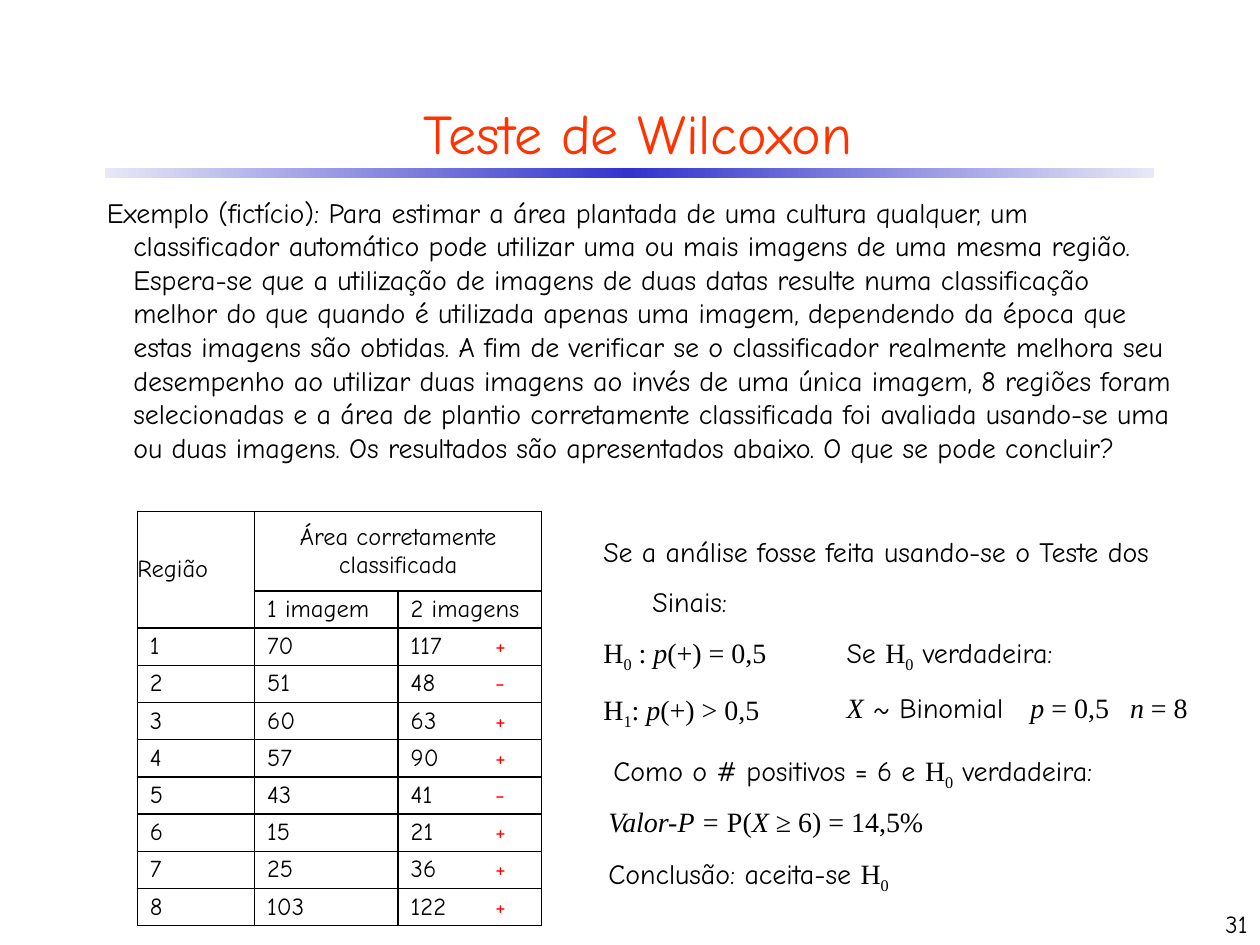
from lxml.etree import SubElement
from pptx import Presentation
from pptx.dml.color import RGBColor
from pptx.enum.shapes import MSO_SHAPE
from pptx.enum.text import MSO_ANCHOR, MSO_AUTO_SIZE, PP_ALIGN
from pptx.oxml import parse_xml
from pptx.oxml.ns import nsdecls, qn
from pptx.util import Emu, Inches, Pt

COMIC, TIMES = "Comic Neue", "Times New Roman"
BLACK, RED, ORANGE, WHITE = "000000", "FF0000", "FF3300", "FFFFFF"
PALE, BLUE = "E8E8F6", "3333CC"
NO_STYLE = "{2D5ABB26-0587-4C30-8999-92F81FD0307C}"

TITLE = "Teste de Wilcoxon"
EXAMPLE = (
    "Exemplo (fictício): Para estimar a área plantada de uma cultura qualquer, um "
    "classificador automático pode utilizar uma ou mais imagens de uma mesma região. "
    "Espera-se que a utilização de imagens de duas datas resulte numa classificação "
    "melhor do que quando é utilizada apenas uma imagem, dependendo da época que "
    "estas imagens são obtidas. A fim de verificar se o classificador realmente melhora "
    "seu desempenho ao utilizar duas imagens ao invés de uma única imagem, 8 regiões "
    "foram selecionadas e a área de plantio corretamente classificada foi avaliada "
    "usando-se uma ou duas imagens. Os resultados são apresentados abaixo. O que se "
    "pode concluir?"
)
INTRO = "Se a análise fosse feita usando-se o Teste dos Sinais:"
HEADS = ["Região", "Área corretamente classificada", "1 imagem", "2 imagens"]
AREAS = [(70, 117), (51, 48), (60, 63), (57, 90),
         (43, 41), (15, 21), (25, 36), (103, 122)]

# Run styles: c = plain, t = formula, i = formula variable, s = subscript
STYLES = {
    "c": {"face": COMIC},
    "t": {"face": TIMES},
    "i": {"face": TIMES, "italic": True},
    "s": {"face": TIMES, "base": -25},
}
H0 = [("H", "t"), ("0", "s")]
H1 = [("H", "t"), ("1", "s")]
NOTES = [  # left, top, width, height, paragraphs
    (4.69, 4.84, 1.95, 0.91, [
        H0 + [(" : ", "t"), ("p", "i"), ("(+) = 0,5", "t")],
        H1 + [(": ", "t"), ("p", "i"), ("(+) > 0,5", "t")]]),
    (6.62, 4.84, 2.99, 0.91, [
        [("Se ", "c")] + H0 + [(" verdadeira:", "c")],
        [("X", "i"), (" ~ Binomial\t", "c"), ("p", "i"), (" = 0,5\t", "t"),
         ("n", "i"), (" = 8", "t")]]),
    (4.77, 5.78, 4.37, 0.46, [
        [("Como o # positivos = 6 e ", "c")] + H0 + [(" verdadeira:", "c")]]),
    (4.73, 6.2, 2.73, 0.91, [
        [("Valor-P = ", "i"), ("P(", "t"), ("X", "i"), (" ≥ 6) = 14,5%", "t")],
        [("Conclusão: aceita-se ", "c")] + H0]),
]
TABS = [1.46, 2.25]

TABLE_LEFT, TABLE_TOP, TABLE_TALL = 1.09, 4.06, 3.29
COLS = [0.93, 1.14, 1.14]
HEAD_TALL = 0.63
ROW_TALL = (TABLE_TALL - HEAD_TALL) / (len(AREAS) + 1)
SIGN_LEFT, SIGN_WIDE = 3.83, 0.47


def color(code):
    return RGBColor.from_string(code)


def write(para, text, face=COMIC, size=16, ink=BLACK, italic=False, base=0):
    """Add one run; base is the baseline shift in percent."""
    run = para.add_run()
    run.text = text
    font = run.font
    font.name, font.size, font.italic = face, Pt(size), italic
    font.color.rgb = color(ink)
    if base:
        run._r.get_or_add_rPr().set("baseline", str(base * 1000))


def add_box(slide, left, top, wide, tall, paras, size=16, gap=None, hang=0,
            align=PP_ALIGN.LEFT, anchor=MSO_ANCHOR.TOP):
    """Add a text box; paras holds lists of (text, style) runs."""
    box = slide.shapes.add_textbox(*map(Inches, (left, top, wide, tall)))
    frame = box.text_frame
    frame.word_wrap, frame.vertical_anchor = True, anchor
    frame.auto_size = MSO_AUTO_SIZE.NONE
    for num, runs in enumerate(paras):
        para = frame.add_paragraph() if num else frame.paragraphs[0]
        para.alignment, para.line_spacing = align, gap
        props = para._p.get_or_add_pPr()
        if hang:
            props.set("marL", str(Inches(hang)))
            props.set("indent", str(-Inches(hang)))
        if any("\t" in text for text, _ in runs):
            stops = SubElement(props, qn("a:tabLst"))
            for pos in TABS:
                SubElement(stops, qn("a:tab"), pos=str(Inches(pos)), algn="l")
        for text, style in runs:
            write(para, text, size=size, **STYLES[style])


def add_grid(slide, left, top, cols, rows):
    wide, tall = Inches(sum(cols)), Inches(sum(rows))
    frame = slide.shapes.add_table(len(rows), len(cols), Inches(left),
                                   Inches(top), wide, tall)
    table = frame.table
    table.first_row = table.horz_banding = False
    table._tbl.tblPr.find(qn("a:tableStyleId")).text = NO_STYLE
    for col, size in zip(table.columns, cols):
        col.width = Inches(size)
    for row, size in zip(table.rows, rows):
        row.height = Inches(size)
    return table


def fill_cell(cell, text, ink=BLACK, pad=0.1, align=PP_ALIGN.LEFT):
    cell.margin_left = cell.margin_right = Inches(pad)
    cell.margin_top = cell.margin_bottom = Emu(0)
    cell.vertical_anchor = MSO_ANCHOR.MIDDLE
    para = cell.text_frame.paragraphs[0]
    para.alignment = align
    write(para, text, size=14, ink=ink)


def frame_cell(cell):
    """Give a cell black borders and a white fill."""
    props = cell._tc.get_or_add_tcPr()
    for side in ("lnL", "lnR", "lnT", "lnB"):
        props.append(parse_xml(
            f'<a:{side} {nsdecls("a")} w="{Pt(1)}"><a:solidFill>'
            f'<a:srgbClr val="{BLACK}"/></a:solidFill></a:{side}>'))
    cell.fill.solid()
    cell.fill.fore_color.rgb = color(WHITE)


def add_bar(slide):
    bar = slide.shapes.add_shape(MSO_SHAPE.RECTANGLE, *map(
        Inches, (0.83, 1.33, 8.33, 0.08)))
    bar.shadow.inherit = False
    bar.line.fill.background()
    bar.fill.gradient()
    bar.fill.gradient_angle = 0
    stops = bar._element.spPr.find(qn("a:gradFill")).find(qn("a:gsLst"))
    for stop in list(stops):
        stops.remove(stop)
    for pos, code in ((0, PALE), (50, BLUE), (100, PALE)):
        stop = SubElement(stops, qn("a:gs"), pos=str(pos * 1000))
        SubElement(stop, qn("a:srgbClr"), val=code)


def add_title(slide):
    title = slide.shapes.title
    title.left, title.top, title.width, title.height = map(
        Inches, (0.33, 0.67, 9.47, 0.75))
    title.text_frame.vertical_anchor = MSO_ANCHOR.MIDDLE
    para = title.text_frame.paragraphs[0]
    para.alignment = PP_ALIGN.CENTER
    write(para, TITLE, size=32, ink=ORANGE)


def add_areas(slide):
    rows = [HEAD_TALL] + [ROW_TALL] * (len(AREAS) + 1)
    table = add_grid(slide, TABLE_LEFT, TABLE_TOP, COLS, rows)
    for cell in table.iter_cells():
        frame_cell(cell)
    table.cell(0, 0).merge(table.cell(1, 0))
    table.cell(0, 1).merge(table.cell(0, 2))
    region, area, one, two = HEADS
    fill_cell(table.cell(0, 0), region, pad=0)
    fill_cell(table.cell(0, 1), area, align=PP_ALIGN.CENTER)
    fill_cell(table.cell(1, 1), one)
    fill_cell(table.cell(1, 2), two)
    for num, pair in enumerate(AREAS, 1):
        for col, value in enumerate((num, *pair)):
            fill_cell(table.cell(num + 1, col), str(value))


def add_signs(slide):
    top = TABLE_TOP + HEAD_TALL + ROW_TALL
    table = add_grid(slide, SIGN_LEFT, top, [SIGN_WIDE], [ROW_TALL] * len(AREAS))
    for row, (one, two) in enumerate(AREAS):
        cell = table.cell(row, 0)
        fill_cell(cell, "+" if two > one else "-", ink=RED)
        cell.fill.background()


def main():
    deck = Presentation()
    deck.slide_width, deck.slide_height = Inches(10), Inches(7.5)
    slide = deck.slides.add_slide(deck.slide_layouts[5])
    add_bar(slide)
    add_title(slide)
    add_box(slide, 0.75, 1.5, 8.7, 2.52, [[(EXAMPLE, "c")]], hang=0.21)
    add_areas(slide)
    add_box(slide, 4.69, 4.06, 5, 0.86, [[(INTRO, "c")]], gap=1.5, hang=0.39)
    for *place, paras in NOTES:
        add_box(slide, *place, paras, gap=1.5)
    add_signs(slide)
    add_box(slide, 7.92, 7, 2.08, 0.5, [[("31", "c")]], size=14,
            align=PP_ALIGN.RIGHT, anchor=MSO_ANCHOR.BOTTOM)
    deck.save("out.pptx")


if __name__ == "__main__":
    main()
